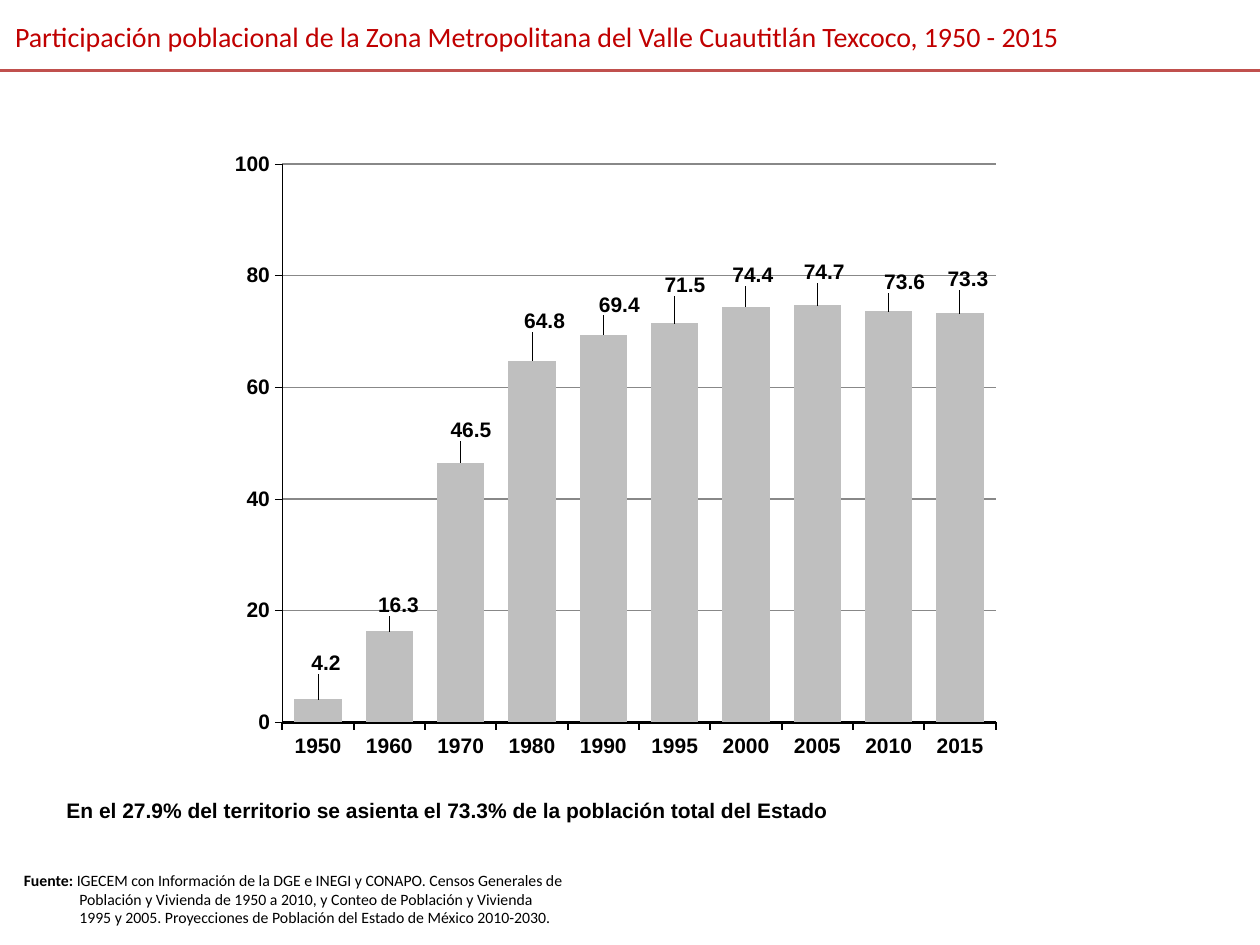
from lxml.etree import SubElement
from pptx import Presentation
from pptx.chart.data import CategoryChartData
from pptx.dml.color import RGBColor
from pptx.enum.chart import XL_CHART_TYPE, XL_LABEL_POSITION, XL_TICK_LABEL_POSITION, XL_TICK_MARK
from pptx.enum.shapes import MSO_CONNECTOR
from pptx.enum.text import MSO_ANCHOR, MSO_AUTO_SIZE, PP_ALIGN
from pptx.oxml.ns import qn
from pptx.oxml import parse_xml
from pptx.util import Cm, Pt

BLACK, RED, RULE_RED = "000000", "C00000", "C0504D"
BAR_GRAY, GRID_GRAY = "BFBFBF", "888888"
CHART_NS = 'xmlns:c="http://schemas.openxmlformats.org/drawingml/2006/chart"'

# Year, share of population, label shift right and up (percent of chart size)
POPULATION = [
    ("1950", 4.2, 0.7, 2.9), ("1960", 16.3, 0.8, 1.5), ("1970", 46.5, 0.9, 2.4),
    ("1980", 64.8, 1.1, 3.5), ("1990", 69.4, 1.4, 2.1), ("1995", 71.5, 0.9, 3.3),
    ("2000", 74.4, 0.6, 2.4), ("2005", 74.7, 0.6, 2.6), ("2010", 73.6, 1.4, 2.0),
    ("2015", 73.3, 0.7, 2.6),
]
PLOT_AREA = {"x": 0.18, "y": 0.055, "w": 0.625, "h": 0.841}


def color(hex_string):
    return RGBColor.from_string(hex_string)


def set_font(font, name="Arial", size=12, bold=True, fill=BLACK):
    font.name, font.size, font.bold = name, Pt(size), bold
    font.color.rgb = color(fill)


def add_run(paragraph, text, **font_format):
    run = paragraph.add_run()
    run.text = text
    set_font(run.font, **font_format)


def place(shape, box):
    shape.left, shape.top, shape.width, shape.height = (Cm(v) for v in box)


def add_text_box(slide, box, wrap=True):
    text_box = slide.shapes.add_textbox(*(Cm(v) for v in box))
    text_box.text_frame.word_wrap = wrap
    text_box.text_frame.auto_size = MSO_AUTO_SIZE.SHAPE_TO_FIT_TEXT
    return text_box.text_frame.paragraphs[0]


def manual_layout(values, inner=False):
    target = '<c:layoutTarget val="inner"/>' if inner else ""
    modes = '<c:xMode val="edge"/><c:yMode val="edge"/>' if inner else ""
    parts = "".join(f'<c:{key} val="{value}"/>' for key, value in values.items())
    return parse_xml(f"<c:layout {CHART_NS}><c:manualLayout>{target}{modes}{parts}"
                     "</c:manualLayout></c:layout>")


def add_heading(slide, box):
    left, top, width, height = box
    title = slide.shapes.title
    place(title, (left + 0.05, top + 0.23, width - 0.89, 0.97))
    frame = title.text_frame
    frame.word_wrap = True
    frame.vertical_anchor = MSO_ANCHOR.TOP
    paragraph = frame.paragraphs[0]
    paragraph.alignment = PP_ALIGN.LEFT
    paragraph.line_spacing = 1.05
    add_run(paragraph, "Participación poblacional de la Zona Metropolitana del Valle "
            "Cuautitlán Texcoco, 1950 - 2015", name="Calibri", size=16, bold=False, fill=RED)
    # Rule along the foot of the heading
    foot = Cm(top + height)
    rule = slide.shapes.add_connector(MSO_CONNECTOR.STRAIGHT, Cm(left), foot,
                                      Cm(left + width), foot)
    rule.line.color.rgb = color(RULE_RED)
    rule.line.width = Pt(1.5)
    SubElement(rule._element.spPr, qn("a:effectLst"))


def format_axis(axis, line_width):
    axis.major_tick_mark = XL_TICK_MARK.OUTSIDE
    axis.minor_tick_mark = XL_TICK_MARK.NONE
    set_font(axis.tick_labels.font)
    axis.format.line.color.rgb = color(BLACK)
    axis.format.line.width = Pt(line_width)


def add_population_chart(slide, box):
    years, shares, shifts_right, shifts_up = zip(*POPULATION)
    data = CategoryChartData()
    data.categories = years
    data.add_series("Series 1", shares)
    chart = slide.shapes.add_chart(XL_CHART_TYPE.COLUMN_CLUSTERED,
                                   *(Cm(v) for v in box), data).chart
    chart.has_legend = chart.has_title = False
    set_font(chart.font)

    # Axes and gridlines
    format_axis(chart.category_axis, 1.2)
    chart.category_axis.tick_label_position = XL_TICK_LABEL_POSITION.LOW
    share_axis = chart.value_axis
    format_axis(share_axis, 0.3)
    share_axis.minimum_scale, share_axis.maximum_scale, share_axis.major_unit = 0, 100, 20
    share_axis.tick_labels.number_format = "#,##0"
    share_axis.tick_labels.number_format_is_linked = False
    grid = share_axis.major_gridlines.format.line
    grid.color.rgb = color(GRID_GRAY)
    grid.width = Pt(0.75)

    # Bars and their labels
    plot = chart.plots[0]
    plot.gap_width = 50
    plot.vary_by_categories = False
    bars = plot.series[0]
    bars.format.fill.solid()
    bars.format.fill.fore_color.rgb = color(BAR_GRAY)
    for index in range(len(years)):
        label = bars.points[index].data_label
        set_font(label.font)
        label.position = XL_LABEL_POSITION.OUTSIDE_END
    bars.data_labels.show_value = True
    set_font(bars.data_labels.font)

    # Label shifts and plot area
    labels = chart.element.iter(qn("c:dLbl"))
    for label, right, up in zip(labels, shifts_right, shifts_up):
        label.insert(1, manual_layout({"x": right / 100, "y": -up / 100}))
    plot_area = chart.element.find(".//" + qn("c:plotArea"))
    for layout in plot_area.findall(qn("c:layout")):
        plot_area.remove(layout)
    plot_area.insert(0, manual_layout(PLOT_AREA, inner=True))


def add_conclusion(slide, box):
    add_run(add_text_box(slide, box, wrap=False),
            "En el 27.9% del territorio se asienta el 73.3% de la población total del Estado")


def add_source(slide, box):
    paragraph = add_text_box(slide, box)
    indent = Cm(1.12)
    properties = paragraph._p.get_or_add_pPr()
    properties.set("marL", str(indent))
    properties.set("indent", str(-indent))
    add_run(paragraph, "Fuente: ", name="Calibri", size=9)
    add_run(paragraph, "IGECEM con Información de la DGE e INEGI y CONAPO. Censos Generales de "
            "Población y Vivienda de 1950 a 2010, y Conteo de Población y Vivienda 1995 y 2005. "
            "Proyecciones de Población del Estado de México 2010-2030.",
            name="Calibri", size=9, bold=False)


def main():
    presentation = Presentation()
    presentation.slide_width, presentation.slide_height = Cm(25.4), Cm(19.05)
    slide = presentation.slides.add_slide(presentation.slide_layouts[5])
    add_heading(slide, (0, 0, 25.4, 1.42))
    add_population_chart(slide, (1.55, 2.57, 23.01, 13.39))
    add_conclusion(slide, (1.09, 15.95, 16.64, 0.76))
    add_source(slide, (0.23, 17.42, 11.46, 1.42))
    presentation.save("out.pptx")


if __name__ == "__main__":
    main()
